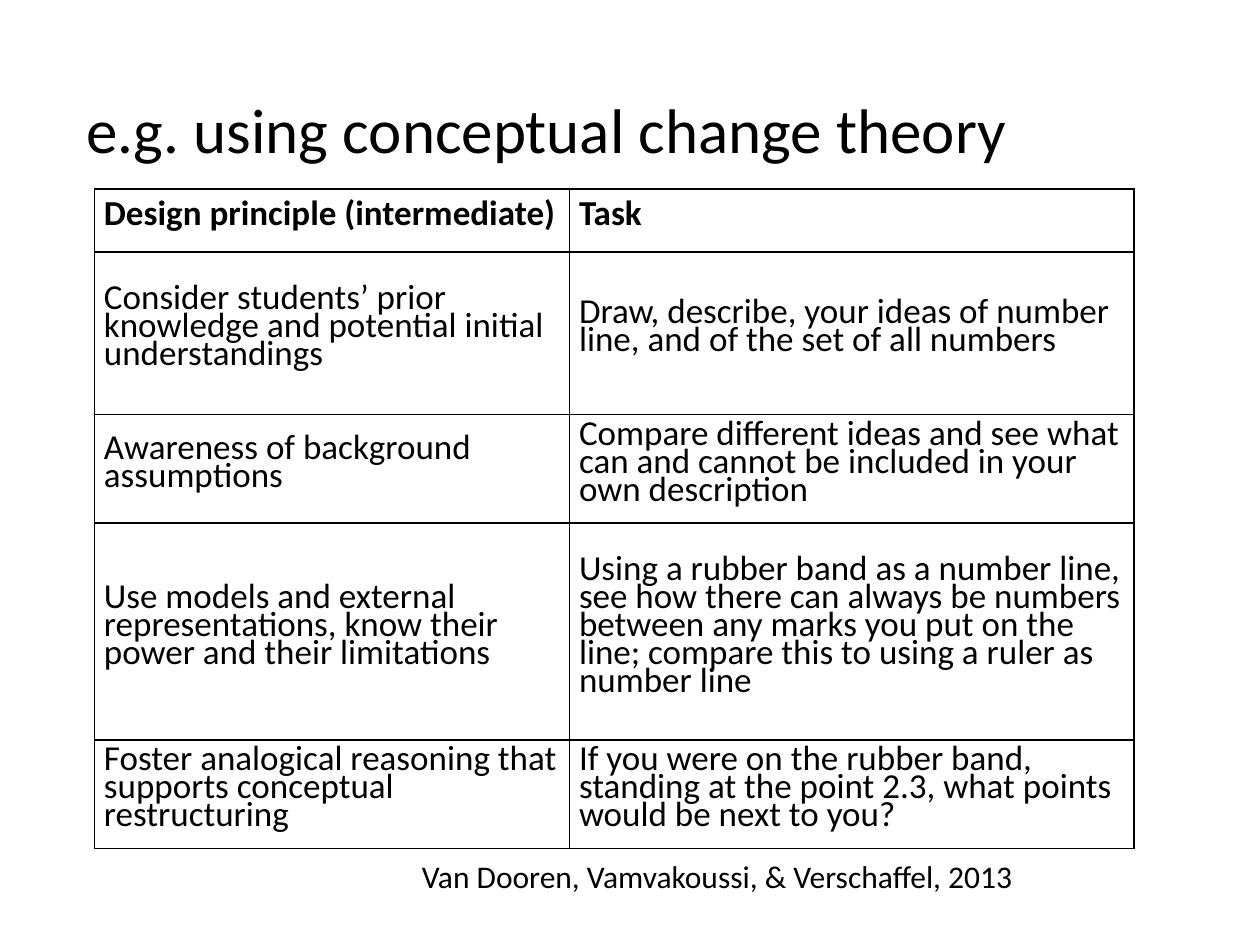
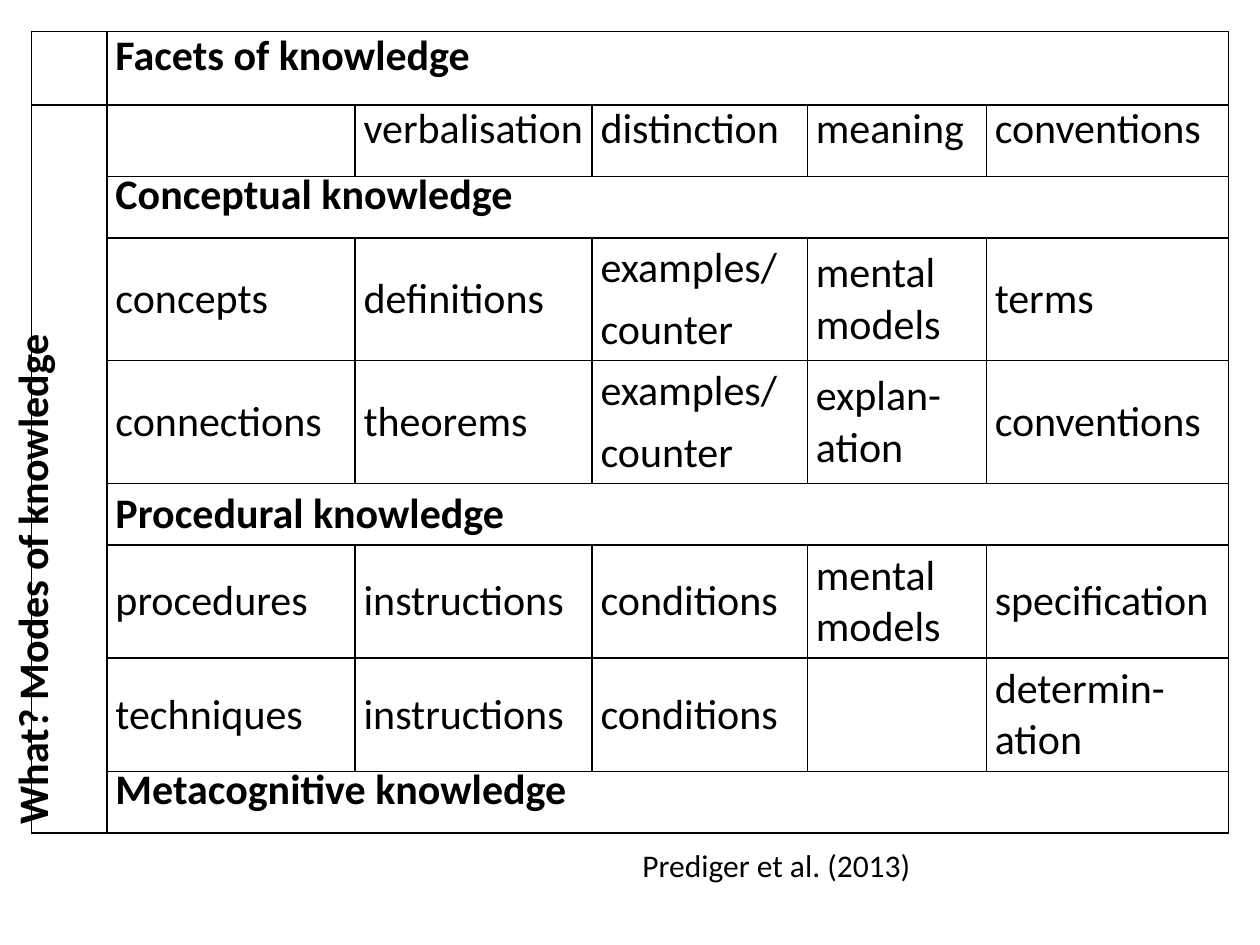
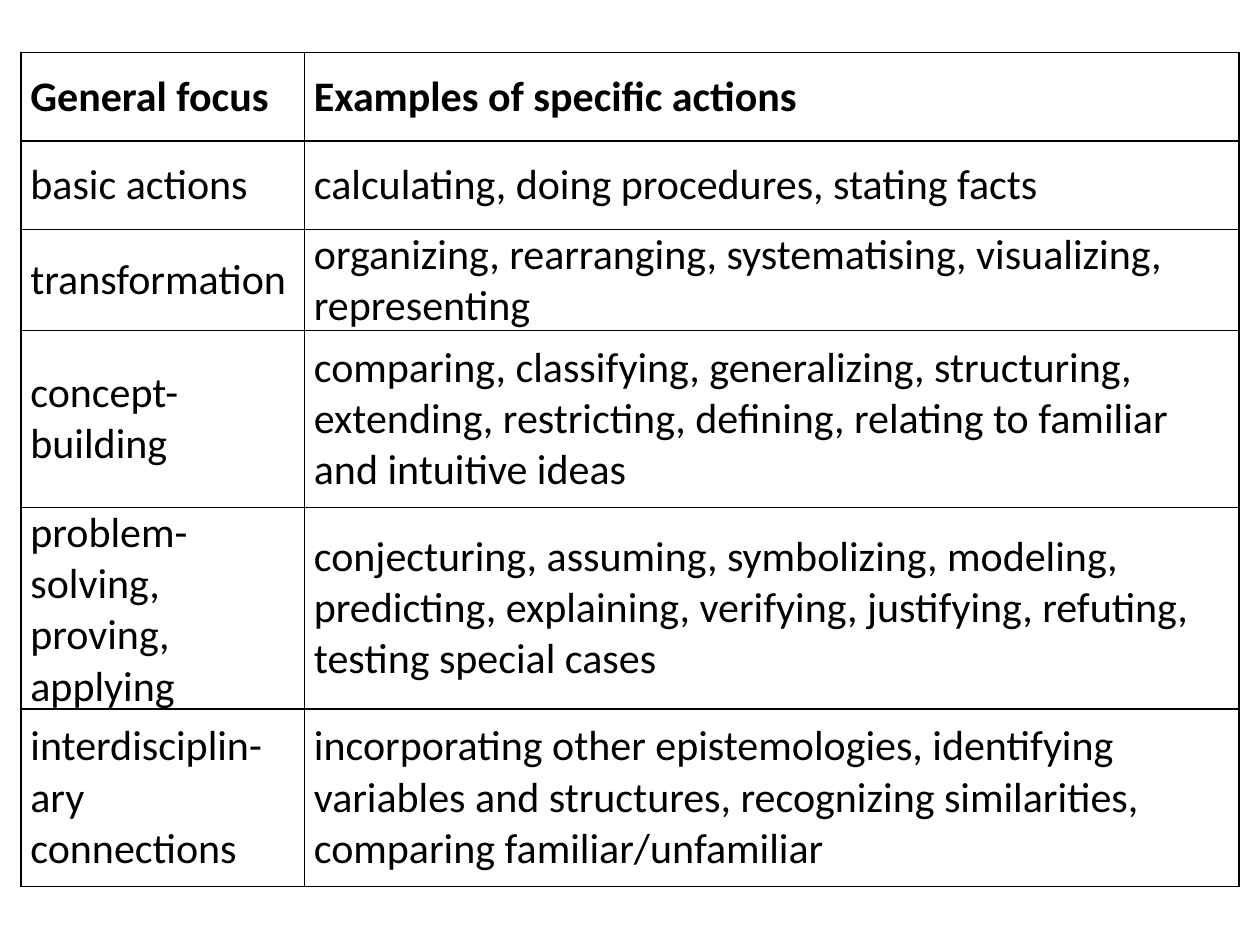
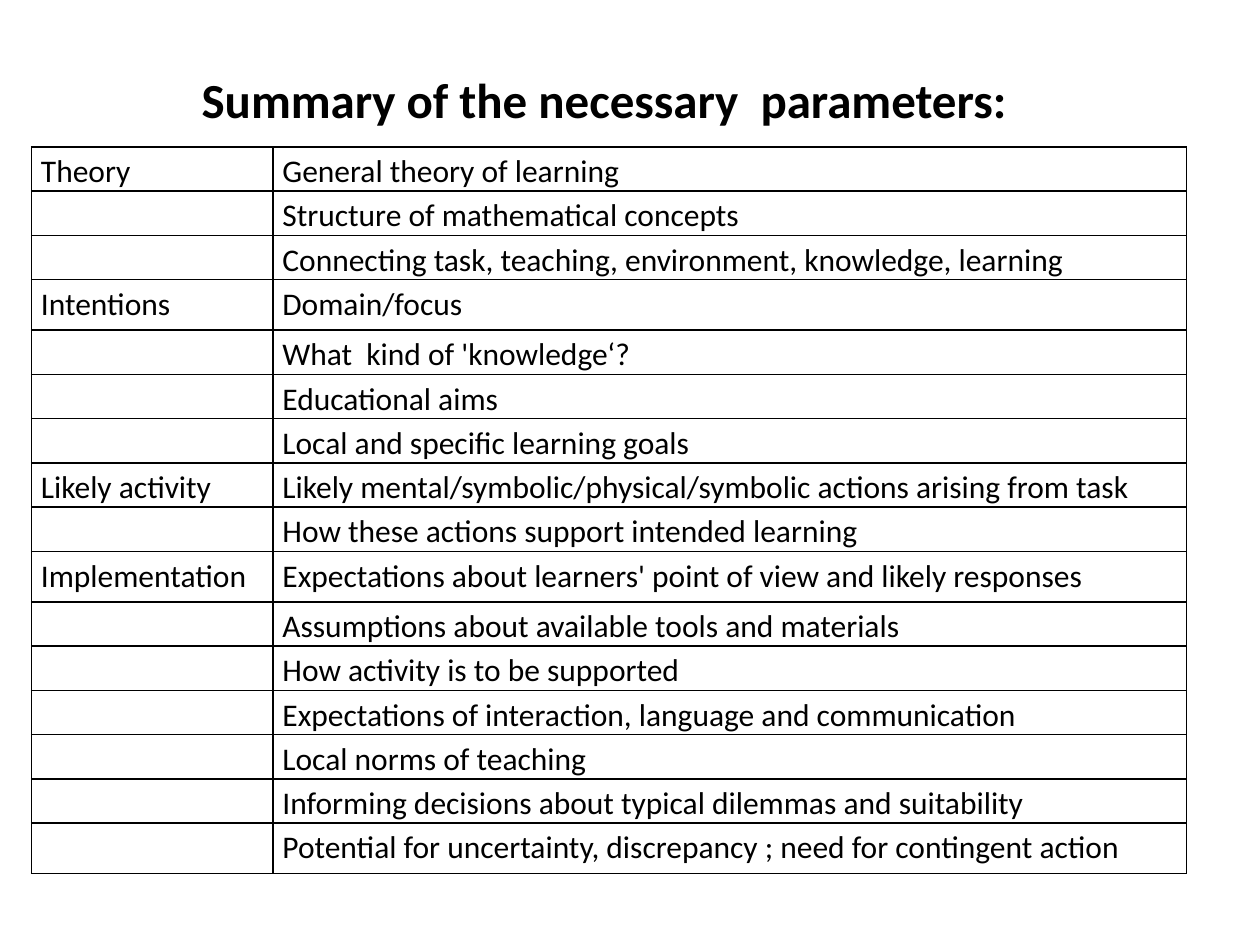
from pptx import Presentation
from pptx.dml.color import RGBColor
from pptx.enum.text import MSO_ANCHOR, PP_ALIGN
from pptx.oxml import parse_xml
from pptx.oxml.ns import nsdecls
from pptx.util import Pt

TOP, MIDDLE = MSO_ANCHOR.TOP, MSO_ANCHOR.MIDDLE
LEFT, JUSTIFY = PP_ALIGN.LEFT, PP_ALIGN.JUSTIFY

# Shared style
FONT = "Calibri"
INK = "000000"
TITLE_ONLY, BLANK = 5, 6
CELL_INSET, NARROW_INSET = 5.4, 4.8
BORDER_EMU = Pt(1)
TIGHT = Pt(16)

# Content
PRINCIPLES = [
    ("Design principle (intermediate)", "Task"),
    ("Consider students’ prior knowledge and potential initial understandings",
     "Draw, describe, your ideas of number line, and of the set of all numbers"),
    ("Awareness of background assumptions",
     "Compare different ideas and see what can and cannot be included in your "
     "own description"),
    ("Use models and external representations, know their power and their limitations",
     "Using a rubber band as a number line, see how there can always be numbers "
     "between any marks you put on the line; compare this to using a ruler as "
     "number line"),
    ("Foster analogical reasoning that supports conceptual restructuring",
     "If you were on the rubber band, standing at the point 2.3, what points "
     "would be next to you?"),
]

MODES = "What? Modes of knowledge"
# A row with a single entry is a heading across all facets
FACETS = [
    ("Facets of knowledge",),
    ("", "verbalisation", "distinction", "meaning", "conventions"),
    ("Conceptual knowledge",),
    ("concepts", "definitions", "examples/\ncounter", "mental models", "terms"),
    ("connections", "theorems", "examples/\ncounter", "explan-ation", "conventions"),
    ("Procedural knowledge",),
    ("procedures", "instructions", "conditions", "mental models", "specification"),
    ("techniques", "instructions", "conditions", "", "determin-ation"),
    ("Metacognitive knowledge",),
]

ACTIONS = [
    ("General focus", "Examples of specific actions"),
    ("basic actions", "calculating, doing procedures, stating facts"),
    ("transformation",
     "organizing, rearranging, systematising, visualizing, representing"),
    ("concept-building",
     "comparing, classifying, generalizing, structuring, extending, restricting, "
     "defining, relating to familiar and intuitive ideas"),
    ("problem-solving, proving, applying",
     "conjecturing, assuming, symbolizing, modeling, predicting, explaining, "
     "verifying, justifying, refuting, testing special cases"),
    ("interdisciplin-ary connections",
     "incorporating other epistemologies, identifying variables and structures, "
     "recognizing similarities, comparing familiar/unfamiliar"),
]

PARAMETERS = {
    "Theory": [
        "General theory of learning",
        "Structure of mathematical concepts",
        "Connecting task, teaching, environment, knowledge, learning",
    ],
    "Intentions": [
        "Domain/focus",
        "What  kind of 'knowledge‘?",
        "Educational aims",
        "Local and specific learning goals",
    ],
    "Likely activity": [
        "Likely mental/symbolic/physical/symbolic actions arising from task",
        "How these actions support intended learning",
    ],
    "Implementation": [
        "Expectations about learners' point of view and likely responses",
        "Assumptions about available tools and materials",
        "How activity is to be supported",
        "Expectations of interaction, language and communication",
        "Local norms of teaching",
        "Informing decisions about typical dilemmas and suitability",
        "Potential for uncertainty, discrepancy ; need for contingent action",
    ],
}


def set_font(paragraph, size, bold=False):
    font = paragraph.font
    font.name, font.size, font.bold = FONT, Pt(size), bold
    font.color.rgb = RGBColor.from_string(INK)


def add_title(slide, text, box, size, bold=False):
    title = slide.shapes.title
    title.left, title.top, title.width, title.height = map(Pt, box)
    frame = title.text_frame
    frame.text, frame.word_wrap, frame.vertical_anchor = text, True, TOP
    frame.paragraphs[0].alignment = LEFT
    set_font(frame.paragraphs[0], size, bold)


def add_citation(slide, text, box):
    frame = slide.shapes.add_textbox(*map(Pt, box)).text_frame
    frame.text, frame.word_wrap = text, True
    set_font(frame.paragraphs[0], 18)


def add_grid(slide, left, top, widths, heights, inset=CELL_INSET):
    """Plain table with thin borders and no fill."""
    table = slide.shapes.add_table(
        len(heights), len(widths), Pt(left), Pt(top),
        Pt(sum(widths)), Pt(sum(heights))).table
    table.first_row = table.horz_banding = False
    for column, width in zip(table.columns, widths):
        column.width = Pt(width)
    for row, height in zip(table.rows, heights):
        row.height = Pt(height)
    for cell in table.iter_cells():
        cell.margin_left = cell.margin_right = Pt(inset)
        cell.margin_top = cell.margin_bottom = 0
        properties = cell._tc.get_or_add_tcPr()
        for side in "LRTB":
            properties.append(parse_xml(
                f'<a:ln{side} {nsdecls("a")} w="{BORDER_EMU}"><a:solidFill>'
                f'<a:srgbClr val="{INK}"/></a:solidFill></a:ln{side}>'))
        cell.fill.background()
    return table


def write(cell, text, size, bold=False, spacing=None, after=6,
          align=LEFT, anchor=MIDDLE):
    if not text:
        return
    cell.text, cell.vertical_anchor = text, anchor
    for paragraph in cell.text_frame.paragraphs:
        paragraph.alignment = align
        paragraph.line_spacing = spacing
        paragraph.space_after = Pt(after)
        set_font(paragraph, size, bold)


def write_rows(table, rows, size, header=True, **style):
    for r, row in enumerate(rows):
        for c, text in enumerate(row):
            write(table.cell(r, c), text, size, header and r == 0, **style)


def main():
    deck = Presentation()
    deck.slide_width, deck.slide_height = Pt(720), Pt(540)

    def new_slide(layout):
        return deck.slides.add_slide(deck.slide_layouts[layout])

    # Slide 1: design principles and tasks
    slide = new_slide(TITLE_ONLY)
    add_title(slide, "e.g. using conceptual change theory", (42, 48, 594, 51), 36)
    table = add_grid(slide, 54, 108, (271.5, 322.5), (36, 93, 62, 124, 62))
    write_rows(table, PRINCIPLES, 20, spacing=TIGHT)
    add_citation(slide, "Van Dooren, Vamvakoussi, & Verschaffel, 2013",
                 (234, 486, 372, 29))

    # Slide 2: modes and facets of knowledge
    slide = new_slide(BLANK)
    table = add_grid(slide, 18, 18, (43.2, 141.8, 135.4, 123.1, 102.2, 138.3),
                     (42, 41, 35, 70.2, 70.2, 35, 64.8, 64.8, 35), NARROW_INSET)
    last_row, last_column = len(FACETS) - 1, len(table.columns) - 1
    tight_rows = (0, 1, 2, last_row)
    for r, row in enumerate(FACETS):
        heading = len(row) == 1
        if heading:
            table.cell(r, 1).merge(table.cell(r, last_column))
        for c, text in enumerate(row, start=1):
            write(table.cell(r, c), text, 24, heading, align=JUSTIFY,
                  spacing=TIGHT if r in tight_rows else None)
    modes = table.cell(1, 0)
    modes.merge(table.cell(last_row, 0))
    write(modes, MODES, 24, True, TIGHT, align=JUSTIFY, anchor=TOP)
    modes._tc.tcPr.set("vert", "vert270")
    add_citation(slide, "Prediger et al. (2013)", (360, 480, 270, 29))

    # Slide 3: kinds of action
    slide = new_slide(BLANK)
    table = add_grid(slide, 12, 30, (162, 534), [50.6] * 3 + [101.2] * 3)
    write_rows(table, ACTIONS, 24)

    # Slide 4: summary of parameters
    slide = new_slide(TITLE_ONLY)
    add_title(slide, "Summary of the necessary  parameters:",
              (108, 36, 498, 41), 28, True)
    rows = [("" if i else group, item)
            for group, items in PARAMETERS.items() for i, item in enumerate(items)]
    tall_rows = (3, 9, 15)
    heights = [28.8 if r in tall_rows else 23 for r in range(len(rows))]
    table = add_grid(slide, 18, 84, (138, 522), heights)
    write_rows(table, rows, 18, header=False, spacing=1.15, after=0, anchor=TOP)

    deck.save("out.pptx")


if __name__ == "__main__":
    main()
